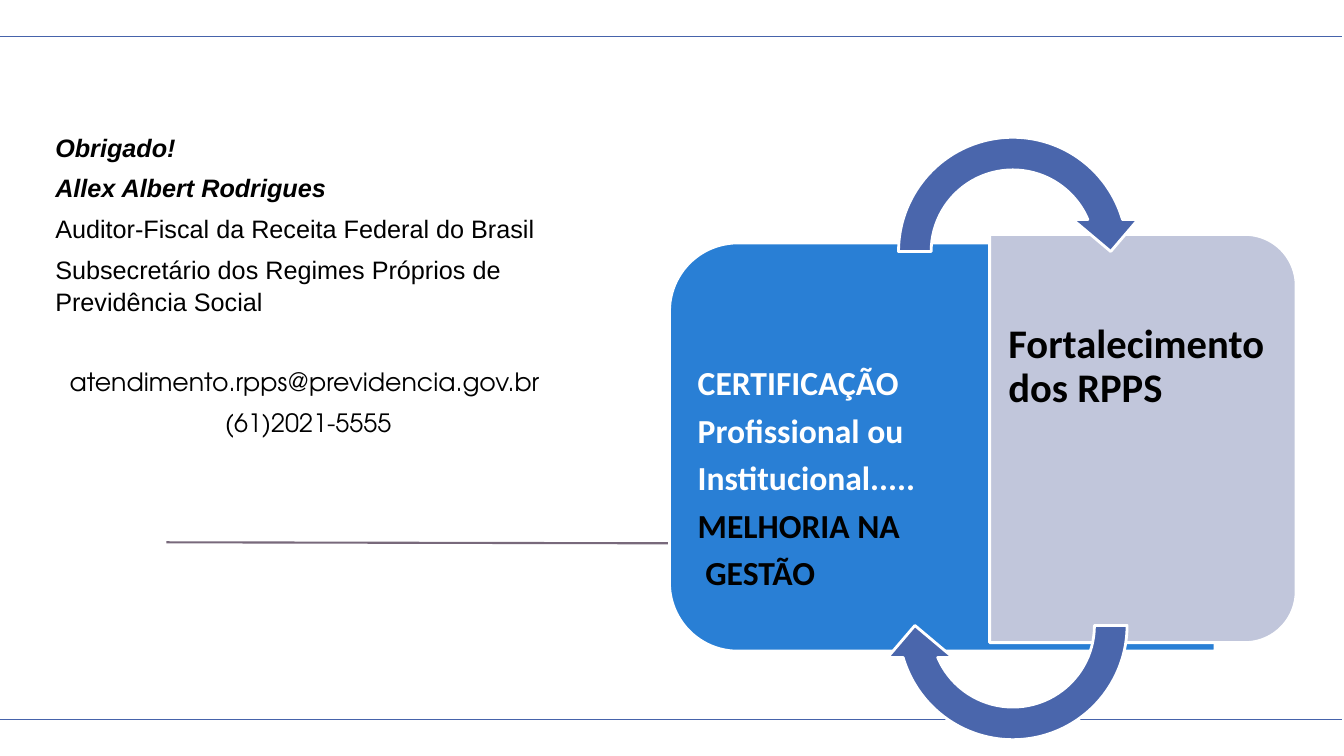
"""Build the closing slide: contact details beside a two-part cycle diagram."""
from dataclasses import dataclass, field

from lxml import etree
from pptx import Presentation
from pptx import util as u
from pptx.dml.color import RGBColor
from pptx.enum import shapes, text
from pptx.oxml.ns import qn

EMU_PER_PX = 9144


@dataclass(frozen=True)
class Theme:
    rule: str = "4663AB"
    divider: str = "78697B"
    certification: str = "297FD5"
    strengthening: str = "C1C6DB"
    arrow: str = "4A66AC"
    white: str = "FFFFFF"
    black: str = "000000"
    contact_size: int = 18
    certification_size: int = 24
    strengthening_size: int = 29
    thin: float = 0.75
    medium: float = 1.5
    outline: float = 2


THEME = Theme()


@dataclass(frozen=True)
class Rule:
    start: tuple[int, int]
    end: tuple[int, int]
    color: str
    width: float


@dataclass(frozen=True)
class Block:
    frame: tuple[int, int, int, int]
    rotation: int
    preset: shapes.MSO_SHAPE
    adjustments: tuple[float, ...]
    color: str


@dataclass(frozen=True)
class Line:
    words: str
    font: dict
    color: str = THEME.black
    layout: dict = field(default_factory=dict)


@dataclass(frozen=True)
class TextBox:
    frame: tuple[int, int, int, int]
    insets: tuple[int, int, int, int]
    spacing: dict
    lines: tuple[Line, ...]


PANEL = shapes.MSO_SHAPE.ROUND_2_SAME_RECTANGLE
ARROW = shapes.MSO_SHAPE.CIRCULAR_ARROW
PANEL_BEND = (0.167, 0)
ARROW_BEND = (0.125, 11.423, 204.577, 108, 0.125)

RULES = (
    Rule((165, 538), (1168, 540), THEME.divider, THEME.medium),
    *(Rule((-3, y), (1331, y), THEME.rule, THEME.thin) for y in (36, 714)),
)
PANELS = (
    Block((732, 173, 405, 541), 270, PANEL, PANEL_BEND, THEME.certification),
    Block((931, 283, 405, 304), 90, PANEL, PANEL_BEND, THEME.strengthening),
)
ARROWS = tuple(
    Block((875, top, 259, 259), turn, ARROW, ARROW_BEND, THEME.arrow)
    for top, turn in ((120, 0), (491, 180))
)

PLAIN = {"name": "Arial", "size": u.Pt(THEME.contact_size)}
STRONG = PLAIN | {"bold": True, "italic": True}
ROUND = PLAIN | {"name": "TeX Gyre Adventor"}
CERTIFICATION = {"name": "Calibri", "size": u.Pt(THEME.certification_size), "bold": True}
STRENGTHENING = CERTIFICATION | {"size": u.Pt(THEME.strengthening_size)}
CENTERED = {"alignment": text.PP_ALIGN.CENTER}

CONTACT_BOX = TextBox(
    (45, 124, 521, 303), (10, 5, 10, 5),
    {"space_before": u.Pt(6), "line_spacing": 1.07},
    (
        Line("Obrigado!", STRONG, layout={"space_before": u.Pt(0)}),
        Line("Allex Albert Rodrigues", STRONG),
        Line("Auditor-Fiscal da Receita Federal do Brasil", PLAIN),
        Line("Subsecretário dos Regimes Próprios de Previdência Social", PLAIN),
        Line("atendimento.rpps@previdencia.gov.br ", ROUND,
             layout=CENTERED | {"space_before": u.Pt(34)}),
        Line("(61)2021-5555", ROUND, layout=CENTERED),
    ),
)
CERTIFICATION_BOX = TextBox(
    (684, 261, 521, 365), (8, 103, 12, 14),
    {"space_after": u.Pt(8), "line_spacing": 0.9},
    (
        *(Line(words, CERTIFICATION, THEME.white)
          for words in ("CERTIFICAÇÃO", "Profissional ou", "Institucional.....")),
        *(Line(words, CERTIFICATION) for words in ("MELHORIA NA", " GESTÃO")),
    ),
)
STRENGTHENING_BOX = TextBox(
    (982, 247, 289, 375), (18, 80, 12, 20),
    {"line_spacing": 0.9},
    (Line("Fortalecimento dos RPPS", STRENGTHENING),),
)


def px(length: int) -> u.Emu:
    """Turn px into EMU."""
    return u.Emu(length * EMU_PER_PX)


def apply(target: object, values: dict) -> None:
    """Set each named format value on the target."""
    for name, value in values.items():
        setattr(target, name, value)


def draw_rule(page, rule: Rule) -> None:
    """Draw one straight line without shadow."""
    line = page.shapes.add_connector(
        shapes.MSO_CONNECTOR.STRAIGHT, *map(px, rule.start + rule.end))
    line.line.color.rgb = RGBColor.from_string(rule.color)
    line.line.width = u.Pt(rule.width)
    etree.SubElement(line._element.spPr, qn("a:effectLst"))


def draw_block(page, block: Block) -> None:
    """Draw one panel or arrow with a white outline."""
    shape = page.shapes.add_shape(block.preset, *map(px, block.frame))
    shape.rotation = block.rotation
    shape.shadow.inherit = False
    for index, value in enumerate(block.adjustments):
        shape.adjustments[index] = value
    shape.fill.solid()
    shape.fill.fore_color.rgb = RGBColor.from_string(block.color)
    shape.line.color.rgb = RGBColor.from_string(THEME.white)
    shape.line.width = u.Pt(THEME.outline)


def draw_text(page, content: TextBox) -> None:
    """Draw one wrapped text box."""
    box = page.shapes.add_textbox(*map(px, content.frame))
    frame = box.text_frame
    sides = ("margin_left", "margin_top", "margin_right", "margin_bottom")
    apply(frame, dict(zip(sides, map(px, content.insets))) | {"word_wrap": True})
    for index, line in enumerate(content.lines):
        para = frame.add_paragraph() if index else frame.paragraphs[0]
        apply(para, content.spacing | line.layout)
        span = para.add_run()
        span.text = line.words
        apply(span.font, line.font)
        span.font.color.rgb = RGBColor.from_string(line.color)


def main() -> None:
    """Assemble the slide and save it."""
    deck = Presentation()
    apply(deck, {"slide_width": px(1333), "slide_height": px(750)})
    page = deck.slides.add_slide(deck.slide_layouts[6])
    for rule in RULES:
        draw_rule(page, rule)
    for block in PANELS:
        draw_block(page, block)
    for content in (CONTACT_BOX, CERTIFICATION_BOX, STRENGTHENING_BOX):
        draw_text(page, content)
    for block in ARROWS:
        draw_block(page, block)
    deck.save("out.pptx")


if __name__ == "__main__":
    main()
